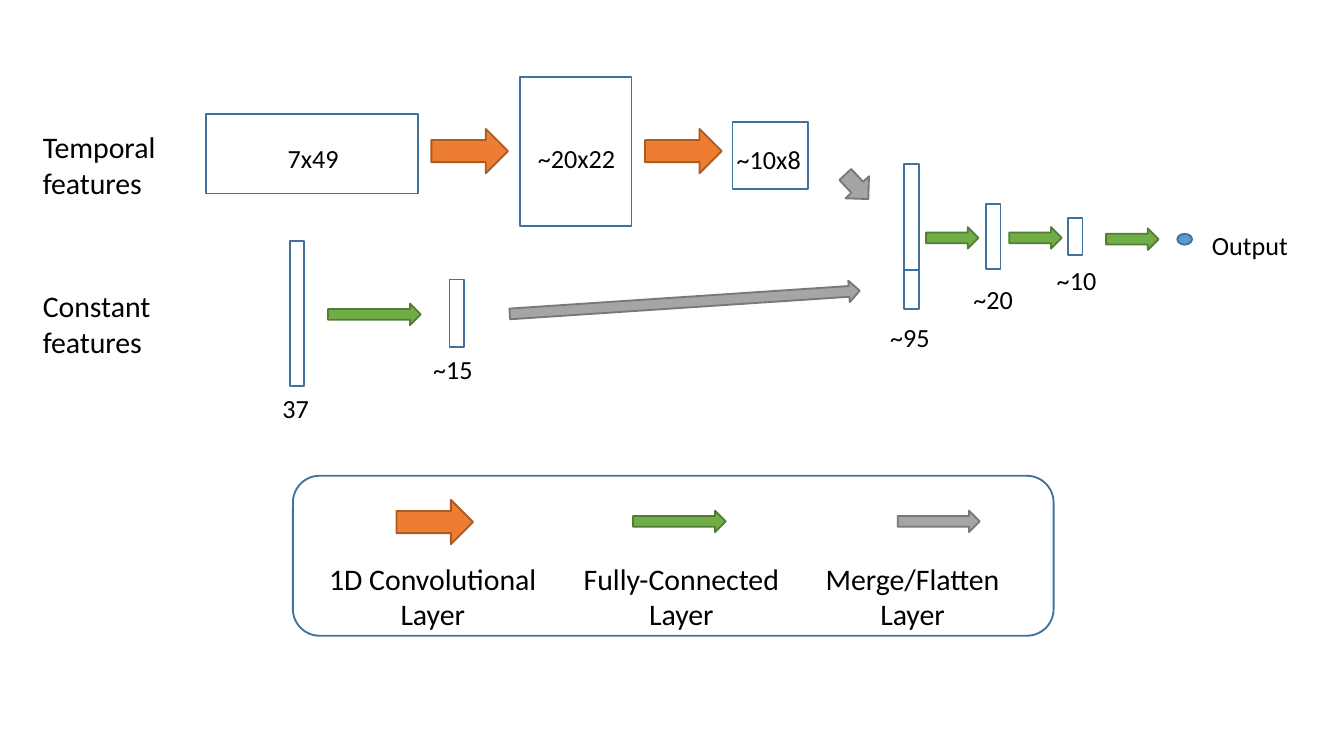
from dataclasses import dataclass

from lxml.etree import SubElement
from pptx import Presentation
from pptx.dml.color import RGBColor
from pptx.enum.shapes import MSO_CONNECTOR, MSO_SHAPE
from pptx.enum.text import PP_ALIGN
from pptx.oxml.ns import qn
from pptx.util import Inches, Pt


@dataclass(frozen=True)
class Theme:
    font: str = "Calibri"
    text: str = "000000"
    label_size: int = 14
    heading_size: int = 16
    line_width: int = 1
    outline: str = "42719B"
    divider: str = "2E75B5"
    layer: str = "FFFFFF"
    output: str = "5B9BD5"
    # Fill and line of each kind of arrow
    conv: tuple = ("ED7D31", "AC5B23")
    dense: tuple = ("70AD47", "517E33")
    merge: tuple = ("A5A5A5", "787878")


class Diagram:
    def __init__(self, slide, theme):
        self.slide = slide
        self.theme = theme

    def shape(self, kind, x, y, w, h, fill, line):
        sp = self.slide.shapes.add_shape(kind, Inches(x), Inches(y), Inches(w), Inches(h))
        sp.shadow.inherit = False
        if fill:
            sp.fill.solid()
            sp.fill.fore_color.rgb = RGBColor.from_string(fill)
        else:
            sp.fill.background()
        sp.line.color.rgb = RGBColor.from_string(line)
        sp.line.width = Pt(self.theme.line_width)
        return sp

    def box(self, x, y, w, h):
        self.shape(MSO_SHAPE.RECTANGLE, x, y, w, h, self.theme.layer, self.theme.outline)

    def arrow(self, x, y, w, h, colors, rotation=0):
        sp = self.shape(MSO_SHAPE.RIGHT_ARROW, x, y, w, h, *colors)
        sp.rotation = rotation

    def text(self, x, y, w, h, lines, size, align=PP_ALIGN.CENTER):
        box = self.slide.shapes.add_textbox(Inches(x), Inches(y), Inches(w), Inches(h))
        tf = box.text_frame
        tf.word_wrap = True
        tf.text = lines
        for p in tf.paragraphs:
            p.alignment = align
            p.font.name = self.theme.font
            p.font.size = Pt(size)
            p.font.color.rgb = RGBColor.from_string(self.theme.text)

    def label(self, center, y, text, w=0.99):
        self.text(center - w / 2, y, w, 0.25, text, self.theme.label_size)

    def vector(self, cx, cy, length):
        """Draw a narrow upright layer around its centre."""
        width = 0.11
        self.box(cx - width / 2, cy - length / 2, width, length)

    def divider(self, x1, x2, y):
        line = self.slide.shapes.add_connector(
            MSO_CONNECTOR.STRAIGHT, Inches(x1), Inches(y), Inches(x2), Inches(y))
        line.line.color.rgb = RGBColor.from_string(self.theme.divider)
        line.line.width = Pt(self.theme.line_width)
        SubElement(line._element.spPr, qn("a:effectLst"))


def draw_legend(d):
    t = d.theme
    entries = [
        (2.26, "1D Convolutional Layer", 2.95, 3.72, 0.57, 0.33, t.conv),
        (4.11, "Fully-Connected Layer", 4.71, 3.8, 0.69, 0.16, t.dense),
        (5.83, "Merge/Flatten Layer", 6.68, 3.8, 0.61, 0.16, t.merge),
    ]
    d.shape(MSO_SHAPE.ROUNDED_RECTANGLE, 2.18, 3.54, 5.66, 1.19, None, t.outline)
    for text_x, name, *arrow in entries:
        d.arrow(*arrow)
        d.text(text_x, 4.12, 1.92, 0.48, name, t.heading_size)


def draw_network(d):
    t = d.theme
    for y, name in [(0.91, "Temporal\nfeatures"), (2.09, "Constant features")]:
        d.text(0.22, y, 1.24, 0.48, name, t.heading_size, PP_ALIGN.LEFT)

    # Temporal branch
    for x, y, w, h in [(1.53, 0.85, 1.58, 0.59), (3.87, 0.57, 0.83, 1.11),
                       (5.45, 0.91, 0.56, 0.5)]:
        d.box(x, y, w, h)
    d.label(2.33, 1.01, "7x49")
    d.label(4.29, 1.01, "~20x22", 0.82)
    d.label(5.72, 1.02, "~10x8", 0.75)
    for x in (3.21, 4.8):
        d.arrow(x, 0.96, 0.57, 0.33, t.conv)

    # Constant branch, then merged layers
    branch_y, merged_y = 2.33, 1.76
    for cx, cy, length, label_x, label_y, size in [
        (2.21, branch_y, 1.08, 2.2, 2.87, "37"),
        (3.4, branch_y, 0.5, 3.37, 2.58, "~15"),
        (6.78, merged_y, 1.08, 6.77, 2.34, "~95"),
        (7.39, merged_y, 0.49, 7.39, 2.06, "~20"),
        (8, merged_y, 0.27, 8.01, 1.92, "~10"),
    ]:
        d.vector(cx, cy, length)
        d.label(label_x, label_y, size)
    d.arrow(2.44, 2.26, 0.69, 0.16, t.dense)
    d.divider(6.72, 6.84, 2.01)
    d.arrow(3.79, 2.17, 2.61, 0.16, t.merge, 356.2)
    d.arrow(6.25, 1.27, 0.25, 0.24, t.merge, 46.8)
    for x, y in [(6.89, 1.69), (7.51, 1.69), (8.23, 1.7)]:
        d.arrow(x, y, 0.39, 0.16, t.dense)

    d.shape(MSO_SHAPE.OVAL, 8.76, 1.74, 0.11, 0.08, t.output, t.outline)
    d.label(9.3, 1.66, "Output")


def main():
    prs = Presentation()
    prs.slide_width = Inches(10)
    prs.slide_height = prs.slide_width * 9 // 16
    blank_layout = prs.slide_layouts[6]
    d = Diagram(prs.slides.add_slide(blank_layout), Theme())
    draw_legend(d)
    draw_network(d)
    prs.save("out.pptx")


if __name__ == "__main__":
    main()
